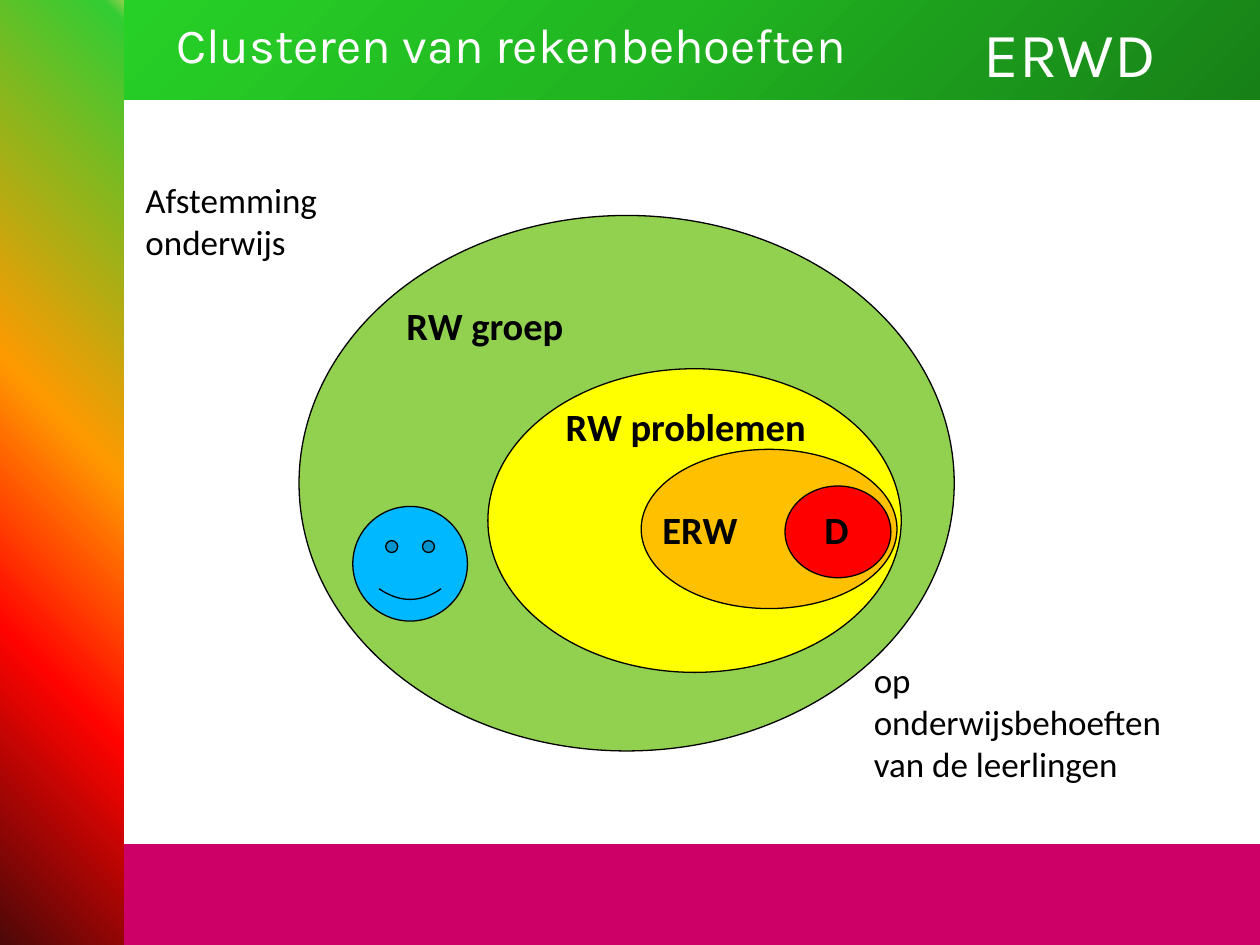
from dataclasses import dataclass

from lxml import etree
from pptx import Presentation
from pptx.dml.color import RGBColor
from pptx.enum.shapes import MSO_SHAPE
from pptx.enum.text import PP_ALIGN
from pptx.oxml.ns import qn
from pptx.util import Pt

RECTANGLE = MSO_SHAPE.RECTANGLE
OVAL = MSO_SHAPE.OVAL
SMILEY = MSO_SHAPE.SMILEY_FACE
LEFT = PP_ALIGN.LEFT
CENTER = PP_ALIGN.CENTER


@dataclass(frozen=True)
class Theme:
    heading_font: str = "Karla"
    body_font: str = "Calibri"
    badge_size: int = 36
    title_size: int = 28
    label_size: int = 22
    note_size: int = 20
    outline_width: float = 0.75
    black: str = "000000"
    white: str = "FFFFFF"
    footer: str = "CC0066"
    group: str = "92D050"
    problems: str = "FFFF00"
    serious: str = "FFC000"
    dyscalculia: str = "FF0000"
    pupil: str = "00B8FF"
    header_stops: tuple = ((0, "178017"), (50, "21B621"), (100, "28D728"))
    sidebar_stops: tuple = ((0, "92D050"), (2, "33CC33"), (45, "FF9900"),
                            (70, "FF0300"), (100, "4D0808"))


def write_text(text_frame, text, *, font, size, color, bold=False, align=LEFT):
    """Fill the frame with one paragraph per line of text."""
    text_frame.word_wrap = True
    for index, line in enumerate(text.split("\n")):
        paragraph = text_frame.paragraphs[0] if index == 0 else text_frame.add_paragraph()
        paragraph.alignment = align
        run = paragraph.add_run()
        run.text = line
        run.font.name = font
        run.font.size = Pt(size)
        run.font.bold = bold
        run.font.color.rgb = RGBColor.from_string(color)


class SlideBuilder:
    def __init__(self, slide, theme):
        self.slide = slide
        self.theme = theme

    def shape(self, kind, left, top, width, height):
        shape = self.slide.shapes.add_shape(kind, Pt(left), Pt(top), Pt(width), Pt(height))
        shape.shadow.inherit = False
        shape.line.fill.background()
        return shape

    def band(self, left, top, width, height, color):
        shape = self.shape(RECTANGLE, left, top, width, height)
        shape.fill.solid()
        shape.fill.fore_color.rgb = RGBColor.from_string(color)

    def gradient_band(self, left, top, width, height, stops, angle):
        """Draw a band whose gradient angle runs counter-clockwise."""
        fill = self.shape(RECTANGLE, left, top, width, height).fill
        fill.gradient()
        fill.gradient_angle = angle
        stop_list = fill._xPr.find(qn("a:gradFill")).find(qn("a:gsLst"))
        for old_stop in list(stop_list):
            stop_list.remove(old_stop)
        for percent, color in stops:
            stop = etree.SubElement(stop_list, qn("a:gs"), pos=str(percent * 1000))
            etree.SubElement(stop, qn("a:srgbClr"), val=color)

    def outlined(self, kind, left, top, width, height, color):
        shape = self.shape(kind, left, top, width, height)
        shape.fill.solid()
        shape.fill.fore_color.rgb = RGBColor.from_string(color)
        shape.line.color.rgb = RGBColor.from_string(self.theme.black)
        shape.line.width = Pt(self.theme.outline_width)
        return shape

    def smiley(self, left, top, size, color, smile):
        face = self.outlined(SMILEY, left, top, size, size, color)
        face.adjustments[0] = smile

    def text(self, text, left, top, width, height, **text_format):
        box = self.slide.shapes.add_textbox(Pt(left), Pt(top), Pt(width), Pt(height))
        write_text(box.text_frame, text, **text_format)

    def heading(self, text, left, top, width, height, size):
        self.text(text, left, top, width, height, size=size,
                  font=self.theme.heading_font, color=self.theme.white)

    def label(self, text, left, top, width, height, align=LEFT):
        self.text(text, left, top, width, height, size=self.theme.label_size, bold=True,
                  font=self.theme.body_font, color=self.theme.black, align=align)

    def note(self, text, left, top, width, height):
        self.text(text, left, top, width, height, size=self.theme.note_size,
                  font=self.theme.body_font, color=self.theme.black)


def main():
    theme = Theme()
    presentation = Presentation()
    presentation.slide_width = Pt(720)
    presentation.slide_height = Pt(540)
    slide = presentation.slides.add_slide(presentation.slide_layouts[6])
    builder = SlideBuilder(slide, theme)

    builder.band(0, 482.4, 720, 57.6, theme.footer)

    nested_groups = (
        (170.9, 123.1, 374.4, 306, theme.group),
        (278.8, 210.7, 236.2, 173.5, theme.problems),
        (366.4, 256.8, 146.2, 91, theme.serious),
        (448.6, 277.7, 60.5, 52.4, theme.dyscalculia),
    )
    for left, top, width, height, color in nested_groups:
        builder.outlined(OVAL, left, top, width, height, color)

    builder.label("RW groep", 225.2, 169.2, 203.8, 28.8)
    builder.label("RW problemen", 316.2, 226.8, 168.5, 30.2)
    builder.label("ERW", 371.5, 285.8, 72, 33.8)
    builder.label("D", 457.5, 285.8, 41, 33.8, align=CENTER)
    builder.smiley(201.6, 289.4, 65.5, theme.pupil, smile=0.047)

    builder.note("Afstemming\nonderwijs", 76, 98.6, 145.4, 54.7)
    builder.note("op onderwijsbehoeften van de leerlingen", 492.2, 373, 193.7, 79.2)

    builder.gradient_band(0, 0, 720, 56.9, theme.header_stops, angle=135)
    builder.heading("ERWD", 555.1, 5, 123.1, 50.4, theme.badge_size)
    builder.heading("Clusteren van rekenbehoeften", 93.6, 5, 436.3, 41, theme.title_size)
    builder.gradient_band(0, 0, 70.6, 540, theme.sidebar_stops, angle=225)

    presentation.save("out.pptx")


if __name__ == "__main__":
    main()
